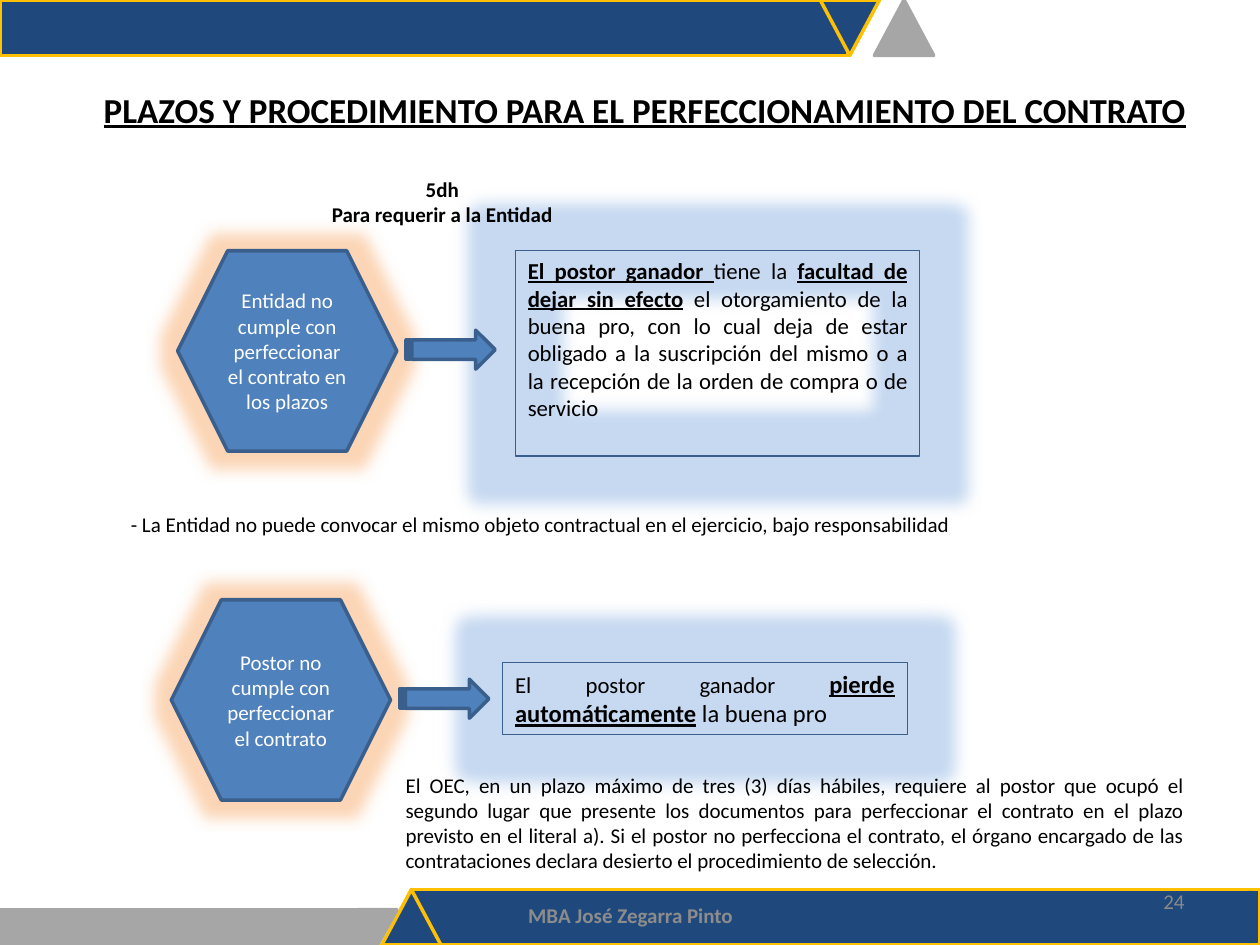
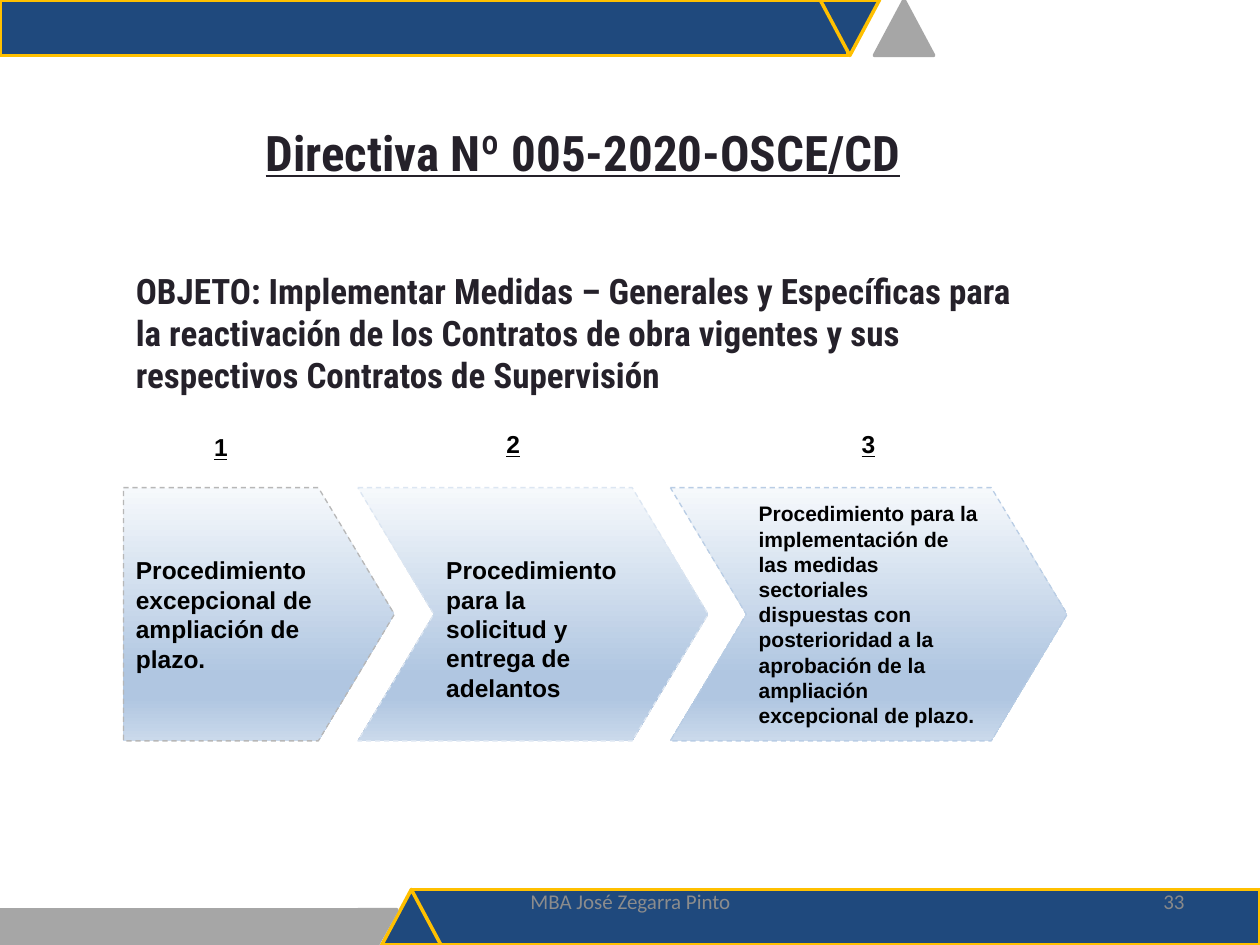
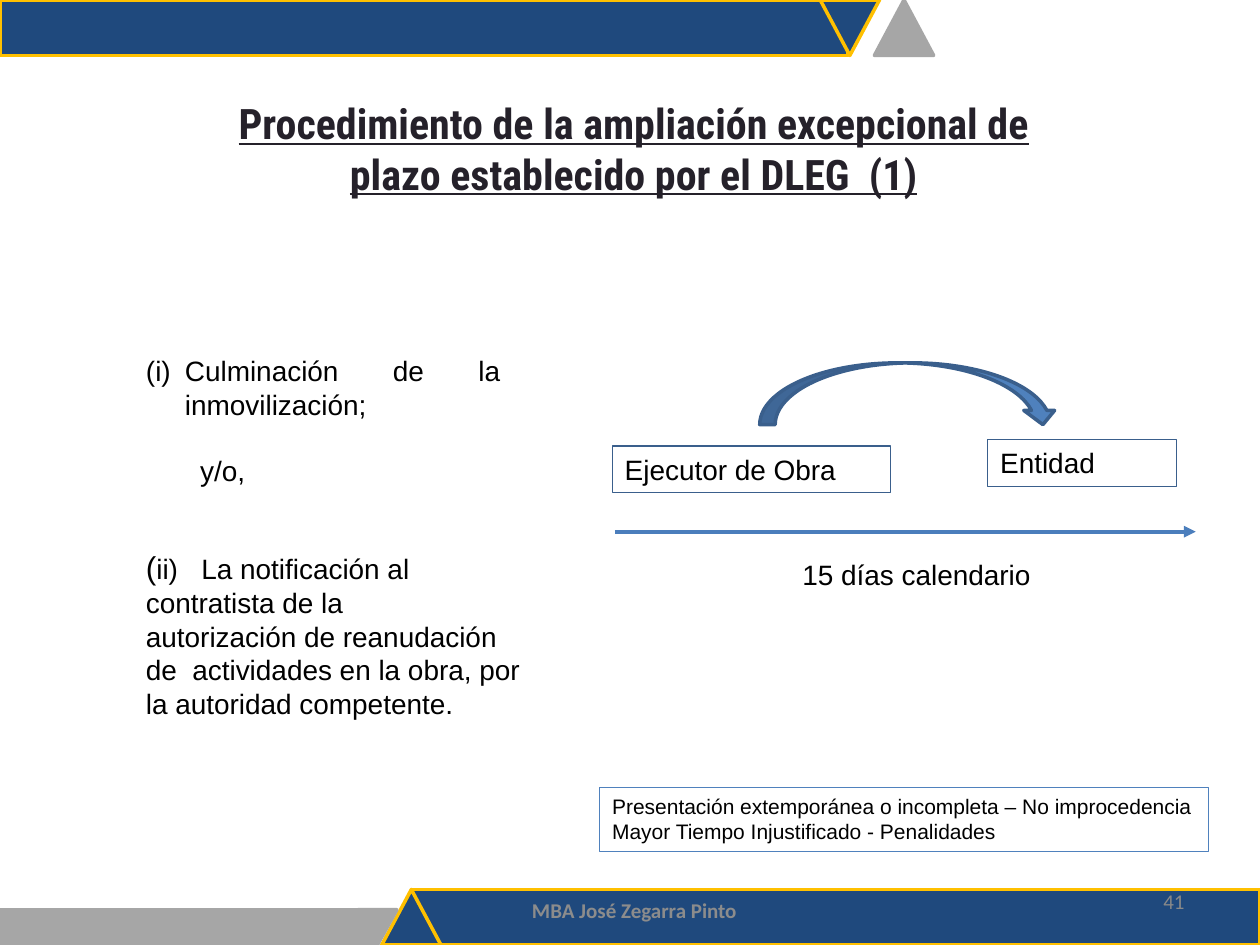
from lxml.etree import SubElement
from pptx import Presentation
from pptx.dml.color import RGBColor
from pptx.enum.dml import MSO_LINE
from pptx.enum.shapes import MSO_CONNECTOR, MSO_SHAPE
from pptx.enum.text import MSO_ANCHOR, PP_ALIGN
from pptx.oxml.ns import qn
from pptx.util import Inches, Pt

# Slide grid: 100 columns by 75 rows
COLUMNS, ROWS = 100, 75
WIDTH, HEIGHT = Inches(10), Inches(7.5)

NAVY, GOLD, GREY = "1F497D", "FFC000", "A6A6A6"
BLUE, BLUE_EDGE, ARROW_BLUE = "4F81BD", "3A5F8C", "4B7EBC"
BLACK, WHITE, HEADING = "000000", "FFFFFF", "25212A"
FOOTER_GREY, NUMBER_GREY = "8C8C8C", "898989"
ORANGE_GLOW, BLUE_GLOW = "F79646", "C6D9F1"
STEP_GRADIENT = [(0, "F6F9FC"), (74, "B0C6E1"), (83, "B0C6E1"), (100, "CAD9EB")]

LEFT, CENTER, RIGHT, JUSTIFY = PP_ALIGN.LEFT, PP_ALIGN.CENTER, PP_ALIGN.RIGHT, PP_ALIGN.JUSTIFY
TOP, MIDDLE, BOTTOM = MSO_ANCHOR.TOP, MSO_ANCHOR.MIDDLE, MSO_ANCHOR.BOTTOM
EMPHASIS = {"bold": True, "underline": True}


def color(hex_string):
    return RGBColor.from_string(hex_string)


def across(columns):
    return int(WIDTH * columns / COLUMNS)


def down(rows):
    return int(HEIGHT * rows / ROWS)


def place(box):
    left, top, width, height = box
    return across(left), down(top), across(width), down(height)


def format_run(run, size, font, ink, bold=False, underline=False):
    run.font.size = Pt(size)
    run.font.name = font
    run.font.color.rgb = color(ink)
    run.font.bold = bold
    run.font.underline = underline


def write(shape, paragraphs, size=12, font="Calibri", ink=BLACK, align=LEFT,
          anchor=TOP, wrap=True, inset=None, **look):
    """Fill a shape; a paragraph is a string or a list of (text, run changes)."""
    frame = shape.text_frame
    frame.word_wrap = wrap
    frame.vertical_anchor = anchor
    if inset:
        frame.margin_top = frame.margin_bottom = down(inset)
    if isinstance(paragraphs, str):
        paragraphs = [paragraphs]
    for index, parts in enumerate(paragraphs):
        paragraph = frame.add_paragraph() if index else frame.paragraphs[0]
        paragraph.alignment = align
        for text, changes in [(parts, {})] if isinstance(parts, str) else parts:
            run = paragraph.add_run()
            run.text = text
            format_run(run, **{"size": size, "font": font, "ink": ink, **look, **changes})
    return frame


def add_text(slide, box, paragraphs, **style):
    return write(slide.shapes.add_textbox(*place(box)), paragraphs, **style)


def add_figure(slide, kind, box, fill=None, line=BLUE_EDGE, weight=2, rotation=0):
    shape = slide.shapes.add_shape(kind, *place(box))
    shape.shadow.inherit = False
    shape.rotation = rotation
    if fill:
        shape.fill.solid()
        shape.fill.fore_color.rgb = color(fill)
    else:
        shape.fill.background()
    shape.line.color.rgb = color(line)
    shape.line.width = Pt(weight)
    return shape


def add_frame(slide, box, paragraphs, line=BLUE_EDGE, **style):
    shape = add_figure(slide, MSO_SHAPE.RECTANGLE, box, line=line, weight=0.75)
    write(shape, paragraphs, **style)
    return shape


def add_glow(shape, hex_string, opacity):
    effects = shape._element.spPr.find(qn("a:effectLst"))
    glow = SubElement(effects, qn("a:glow"), rad=str(Pt(18)))
    tint = SubElement(glow, qn("a:srgbClr"), val=hex_string)
    SubElement(tint, qn("a:alpha"), val=str(opacity * 1000))


def fill_gradient(shape, stops):
    shape.fill.gradient()
    shape.fill.gradient_angle = 270
    stop_list = shape._element.spPr.find(qn("a:gradFill")).find(qn("a:gsLst"))
    for old_stop in list(stop_list):
        stop_list.remove(old_stop)
    for position, hex_string in stops:
        stop = SubElement(stop_list, qn("a:gs"), pos=str(position * 1000))
        SubElement(stop, qn("a:srgbClr"), val=hex_string)


def add_arrow_line(slide, left, right, row):
    line = slide.shapes.add_connector(
        MSO_CONNECTOR.STRAIGHT, across(left), down(row), across(right), down(row))
    line.line.color.rgb = color(ARROW_BLUE)
    line.line.width = Pt(2.25)
    SubElement(line.line._get_or_add_ln(), qn("a:tailEnd"), type="triangle")
    SubElement(line._element.spPr, qn("a:effectLst"))


def add_bands(slide):
    bar, triangle = MSO_SHAPE.RECTANGLE, MSO_SHAPE.FLOWCHART_EXTRACT
    for kind, box, fill, line, rotation in [
        (bar, (0, 0, 67.3, 4.4), NAVY, GOLD, 0),
        (triangle, (65.1, 0, 4.7, 4.4), NAVY, GOLD, 180),
        (triangle, (69.4, 0, 4.7, 4.4), GREY, GREY, 0),
        (bar, (32.7, 70.6, 67.3, 4.4), NAVY, GOLD, 0),
        (bar, (0, 72.2, 29.9, 2.8), GREY, GREY, 0),
        (triangle, (30.3, 70.6, 4.7, 4.4), NAVY, GOLD, 0),
        (triangle, (28.4, 72.2, 3.1, 2.8), GREY, GREY, 180),
    ]:
        add_figure(slide, kind, box, fill, line, rotation=rotation)


def add_base_slide(presentation, number, footer_left=34.2, footer_top=70.6, footer_bold=True):
    slide = presentation.slides.add_slide(presentation.slide_layouts[6])
    add_bands(slide)
    add_text(slide, (footer_left, footer_top, 31.7, 4), "MBA José Zegarra Pinto",
             ink=FOOTER_GREY, bold=footer_bold, align=CENTER, anchor=MIDDLE)
    add_text(slide, (71.7, 69.5, 23.3, 4), str(number),
             ink=NUMBER_GREY, align=RIGHT, anchor=MIDDLE)
    return slide


def add_heading(slide, box, text, size, **style):
    add_text(slide, box, text, **{"size": size, "font": "Roboto Condensed", "ink": HEADING,
                                  **EMPHASIS, **style})


def add_case(slide, left, top, cause, outcome_box, outcome):
    """A hexagon with the cause, an arrow and a framed outcome."""
    hexagon = add_figure(slide, MSO_SHAPE.HEXAGON, (left, top, 17.4, 15.9), BLUE)
    add_glow(hexagon, ORANGE_GLOW, 40)
    write(hexagon, cause, ink=WHITE, align=CENTER, anchor=MIDDLE)
    frame = add_frame(slide, outcome_box, [outcome], size=13, align=JUSTIFY)
    add_glow(frame, BLUE_GLOW, 100)
    add_figure(slide, MSO_SHAPE.STRIPED_RIGHT_ARROW,
               (left + 18.1, top + 6.3, 7.1, 3.1), BLUE)


def add_step(slide, number, number_box, kind, box, edge, paragraphs, size, inset_top=1):
    shape = add_figure(slide, kind, box, line=edge, weight=0.75)
    shape.adjustments[0] = 0.3
    fill_gradient(shape, STEP_GRADIENT)
    shape.line.dash_style = MSO_LINE.DASH
    frame = write(shape, paragraphs, size=size, font="Arial", bold=True,
                  anchor=MIDDLE, inset=1)
    frame.margin_top = down(inset_top)
    add_text(slide, number_box, str(number), size=14, font="Arial", wrap=False, **EMPHASIS)


def build_contract_deadlines(presentation):
    slide = add_base_slide(presentation, 24)
    add_text(slide, (5.9, 6.5, 90.6, 4.4),
             "PLAZOS Y PROCEDIMIENTO PARA EL PERFECCIONAMIENTO DEL CONTRATO",
             size=20, align=CENTER, **EMPHASIS)
    add_case(slide, 14.1, 19.9, "Entidad no cumple con perfeccionar el contrato en los plazos",
             (40.9, 19.9, 32.1, 16.3),
             [("El postor ganador ", EMPHASIS), ("tiene la ", {}),
              ("facultad de dejar sin efecto", EMPHASIS),
              (" el otorgamiento de la buena pro, con lo cual deja de estar obligado a la "
               "suscripción del mismo o a la recepción de la orden de compra o de servicio", {})])
    add_text(slide, (25.2, 13.5, 19.8, 5), ["5dh", "Para requerir a la Entidad"],
             bold=True, align=CENTER, wrap=False)
    add_text(slide, (9.4, 40.1, 67.4, 3),
             "- La Entidad no puede convocar el mismo objeto contractual en el ejercicio, "
             "bajo responsabilidad", align=JUSTIFY, wrap=False)
    add_case(slide, 13.6, 47.6, "Postor no cumple con perfeccionar el contrato",
             (39.9, 52.6, 32.1, 5.7),
             [("El postor ganador ", {}),
              ("pierde automáticamente", {"size": 14, **EMPHASIS}),
              (" la buena pro", {"size": 14})])
    add_text(slide, (31.2, 60.8, 63.8, 9.1),
             "El OEC, en un plazo máximo de tres (3) días hábiles, requiere al postor que ocupó "
             "el segundo lugar que presente los documentos para perfeccionar el contrato en el "
             "plazo previsto en el literal a). Si el postor no perfecciona el contrato, el órgano "
             "encargado de las contrataciones declara desierto el procedimiento de selección.",
             align=JUSTIFY)


def build_directive(presentation):
    slide = add_base_slide(presentation, 33, footer_top=69.5, footer_bold=False)
    add_heading(slide, (20.1, 9.2, 55, 5.7), "Directiva Nº 005-2020-OSCE/CD", 28)
    add_heading(slide, (9.8, 24.7, 72.4, 7.7),
                "OBJETO: Implementar Medidas – Generales y Específicas para la reactivación de "
                "los Contratos de obra vigentes y sus respectivos Contratos de Supervisión",
                20, underline=False, anchor=BOTTOM, inset=1)
    add_step(slide, 1, (16, 33.8, 3.1, 3.4), MSO_SHAPE.PENTAGON, (9.8, 38.7, 21.5, 20.1),
             "B7B7B7", "Procedimiento excepcional de ampliación de plazo.", 14)
    add_step(slide, 2, (39.2, 33.6, 3.1, 3.4), MSO_SHAPE.CHEVRON, (28.4, 38.7, 27.8, 20.1),
             "DCE6F2", "Procedimiento para la solicitud y entrega de adelantos", 14,
             inset_top=3.3)
    add_step(slide, 3, (67.4, 33.6, 3.1, 3.4), MSO_SHAPE.CHEVRON, (53.2, 38.7, 31.5, 20.1),
             "B9CDE5",
             ["Procedimiento para la implementación de las medidas sectoriales dispuestas con",
              "posterioridad a la aprobación de la ampliación excepcional de plazo."], 12)


def build_extension_procedure(presentation):
    slide = add_base_slide(presentation, 41, footer_left=34.5, footer_top=70.2)
    add_heading(slide, (14.1, 7.9, 72.4, 7.7),
                "Procedimiento de la ampliación excepcional de plazo establecido por el DLEG  (1)",
                24, align=CENTER, anchor=MIDDLE)
    body = {"size": 16, "font": "Arial"}

    triggers = add_text(slide, (10.6, 27.6, 30.1, 11.8),
                        ["Culminación de la inmovilización;", "y/o,"], align=JUSTIFY, **body)
    first, second = triggers.paragraphs
    numbered = first._p.get_or_add_pPr()
    numbered.set("marL", str(across(3.1)))
    numbered.set("indent", str(-across(3.1)))
    SubElement(numbered, qn("a:buFont"), typeface="Arial")
    SubElement(numbered, qn("a:buAutoNum"), type="romanLcParenBoth")
    second._p.get_or_add_pPr().set("marL", str(across(4.3)))
    second.space_before = Pt(18.4)

    notice = add_text(slide, (10.6, 43, 31.7, 14.8),
                      [[("(", {"size": 18}),
                        ("ii)\tLa notificación al contratista de la", {})],
                       "autorización de reanudación de  actividades en la obra, por la "
                       "autoridad competente."], **body)
    tabs = SubElement(notice.paragraphs[0]._p.get_or_add_pPr(), qn("a:tabLst"))
    SubElement(tabs, qn("a:tab"), pos=str(across(4.4)), algn="l")

    add_text(slide, (62.7, 43.8, 20.3, 3.7), "15 días calendario", wrap=False, **body)
    add_frame(slide, (48.6, 35.4, 22.1, 3.7), "Ejecutor de Obra", **body)
    add_frame(slide, (78.4, 34.9, 15, 3.7), "Entidad", **body)
    hand_over = add_figure(slide, MSO_SHAPE.CURVED_DOWN_ARROW, (60.3, 28.8, 23.7, 4.9), BLUE)
    for index, share in enumerate((0.25, 0.5, 0.23)):
        hand_over.adjustments[index] = share
    add_arrow_line(slide, 48.8, 94.9, 42.2)
    add_frame(slide, (47.6, 62.5, 48.3, 5.1),
              ["Presentación extemporánea o incompleta – No improcedencia",
               "Mayor Tiempo Injustificado - Penalidades"],
              line=BLUE, font="Arial", wrap=False)


def main():
    presentation = Presentation()
    presentation.slide_width, presentation.slide_height = WIDTH, HEIGHT
    build_contract_deadlines(presentation)
    build_directive(presentation)
    build_extension_procedure(presentation)
    presentation.save("out.pptx")


if __name__ == "__main__":
    main()
